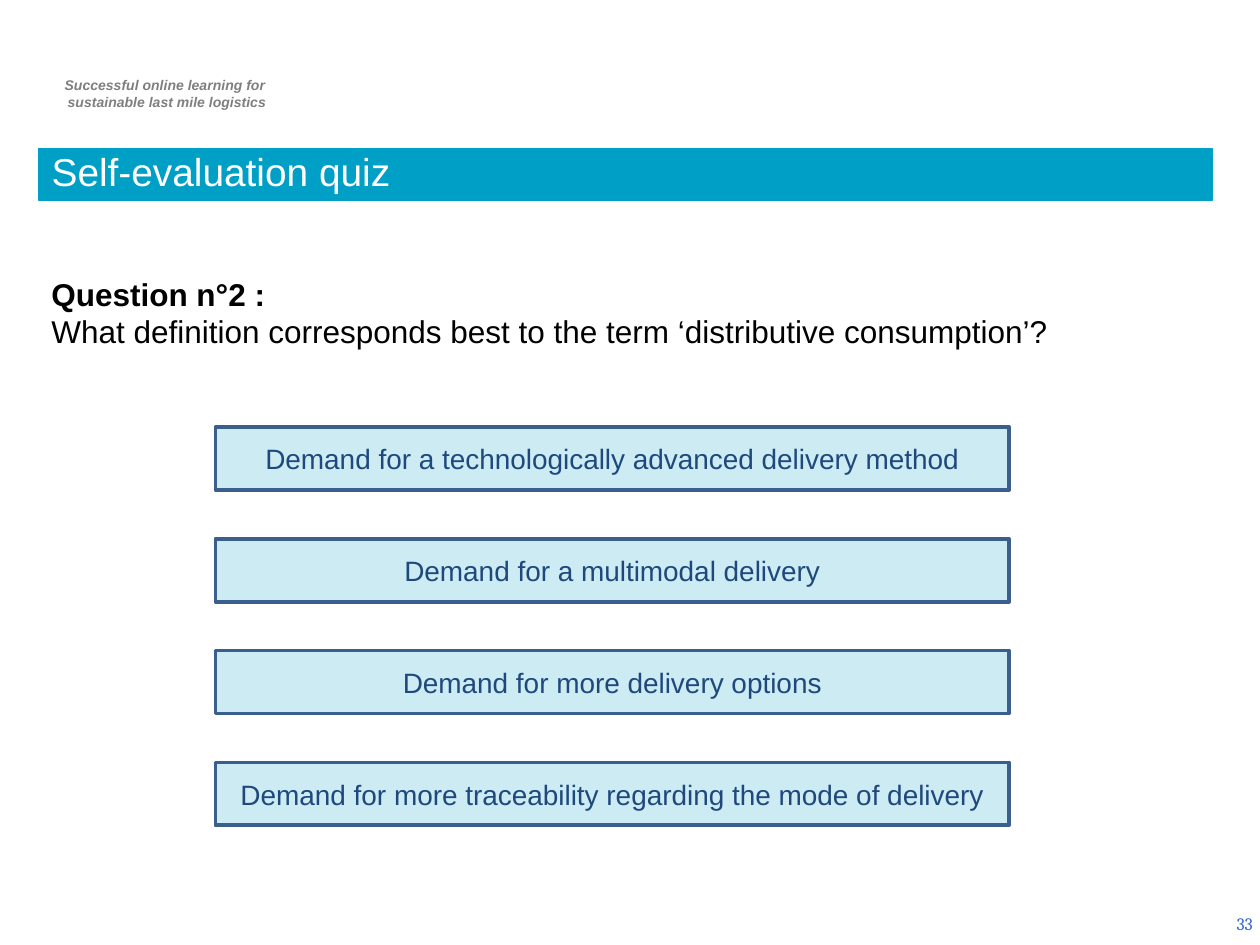
from dataclasses import dataclass

import lxml.etree
import pptx
import pptx.dml.color
import pptx.enum.shapes
import pptx.enum.text
import pptx.oxml.ns
import pptx.util

Pt = pptx.util.Pt
Align = pptx.enum.text.PP_ALIGN
Anchor = pptx.enum.text.MSO_ANCHOR


@dataclass(frozen=True)
class Theme:
    band: str = "009FC6"
    outline: str = "3A5F8C"
    answer: str = "1F497D"
    tagline: str = "7F7F7F"
    number: str = "3366CC"
    black: str = "000000"
    white: str = "FFFFFF"
    font: str = "Arial"
    number_font: str = "Cambria"
    title_size: float = 22.2
    question_size: float = 18
    answer_size: float = 16
    number_size: float = 10
    tagline_size: float = 8


THEME = Theme()
TAGLINE = ["Successful online learning for ", "sustainable last mile logistics"]
QUESTION = [
    "Question n°2 :",
    "What definition corresponds best to the term ‘distributive consumption’?",
]
ANSWERS = [
    "Demand for a technologically advanced delivery method",
    "Demand for a multimodal delivery",
    "Demand for more delivery options",
    "Demand for more traceability regarding the mode of delivery",
]
ANSWER_TOP = 244.1
ANSWER_STEP = 63.84


def color(value):
    return pptx.dml.color.RGBColor.from_string(value)


def paint(shape, fill, line, width):
    shape.fill.solid()
    shape.fill.fore_color.rgb = color(fill)
    shape.line.color.rgb = color(line)
    shape.line.width = Pt(width)


def set_opacity(shape, percent):
    tag = pptx.oxml.ns.qn("a:srgbClr")
    fill_color = shape.fill._xPr.find(pptx.oxml.ns.qn("a:solidFill")).find(tag)
    alpha = lxml.etree.SubElement(fill_color, pptx.oxml.ns.qn("a:alpha"))
    alpha.set("val", str(percent * 1000))


def write(shape, lines, size, text_color, align=Align.LEFT, anchor=Anchor.TOP,
          font=THEME.font, bold=False, italic=False):
    frame = shape.text_frame
    frame.text = "\n".join(lines)
    frame.word_wrap = True
    frame.auto_size = pptx.enum.text.MSO_AUTO_SIZE.NONE
    frame.vertical_anchor = anchor
    for para in frame.paragraphs:
        para.alignment = align
        for span in para.runs:
            span.font.name = font
            span.font.size = Pt(size)
            span.font.bold = bold
            span.font.italic = italic
            span.font.color.rgb = color(text_color)
    return frame


def add_text(page, left, top, width, height, lines, size, text_color, **style):
    box = page.shapes.add_textbox(Pt(left), Pt(top), Pt(width), Pt(height))
    return write(box, lines, size, text_color, **style)


def format_title(page, text):
    title = page.shapes.title
    title.left, title.top = Pt(22.3), Pt(85)
    title.width, title.height = Pt(670.3), Pt(29.5)
    paint(title, THEME.band, THEME.band, 0.75)
    frame = write(title, [text], THEME.title_size, THEME.white, anchor=Anchor.BOTTOM)
    frame.paragraphs[0].line_spacing = 0.8


def add_answer(page, top, text):
    box = page.shapes.add_shape(
        pptx.enum.shapes.MSO_SHAPE.RECTANGLE, Pt(123.1), Pt(top), Pt(453.6), Pt(36))
    box.shadow.inherit = False
    paint(box, THEME.band, THEME.outline, 2)
    set_opacity(box, 20)
    write(box, [text], THEME.answer_size, THEME.answer,
          align=Align.CENTER, anchor=Anchor.MIDDLE)


def main():
    deck = pptx.Presentation()
    deck.slide_width, deck.slide_height = Pt(720), Pt(540)
    page = deck.slides.add_slide(deck.slide_layouts[5])

    tagline = add_text(page, 20.9, 40.3, 146.2, 26.6, TAGLINE, THEME.tagline_size,
                       THEME.tagline, align=Align.CENTER, bold=True, italic=True)
    tagline.margin_left = Pt(10)
    add_text(page, 555.1, 513.4, 167.8, 28.8, ["33"], THEME.number_size, THEME.number,
             align=Align.RIGHT, anchor=Anchor.MIDDLE, font=THEME.number_font)
    format_title(page, "Self-evaluation quiz")
    question = add_text(page, 22.3, 153.4, 670.3, 51.1, QUESTION,
                        THEME.question_size, THEME.black)
    question.paragraphs[0].runs[0].font.bold = True
    question.paragraphs[1].alignment = Align.JUSTIFY
    for index, answer in enumerate(ANSWERS):
        add_answer(page, ANSWER_TOP + index * ANSWER_STEP, answer)

    deck.save("out.pptx")


if __name__ == "__main__":
    main()
